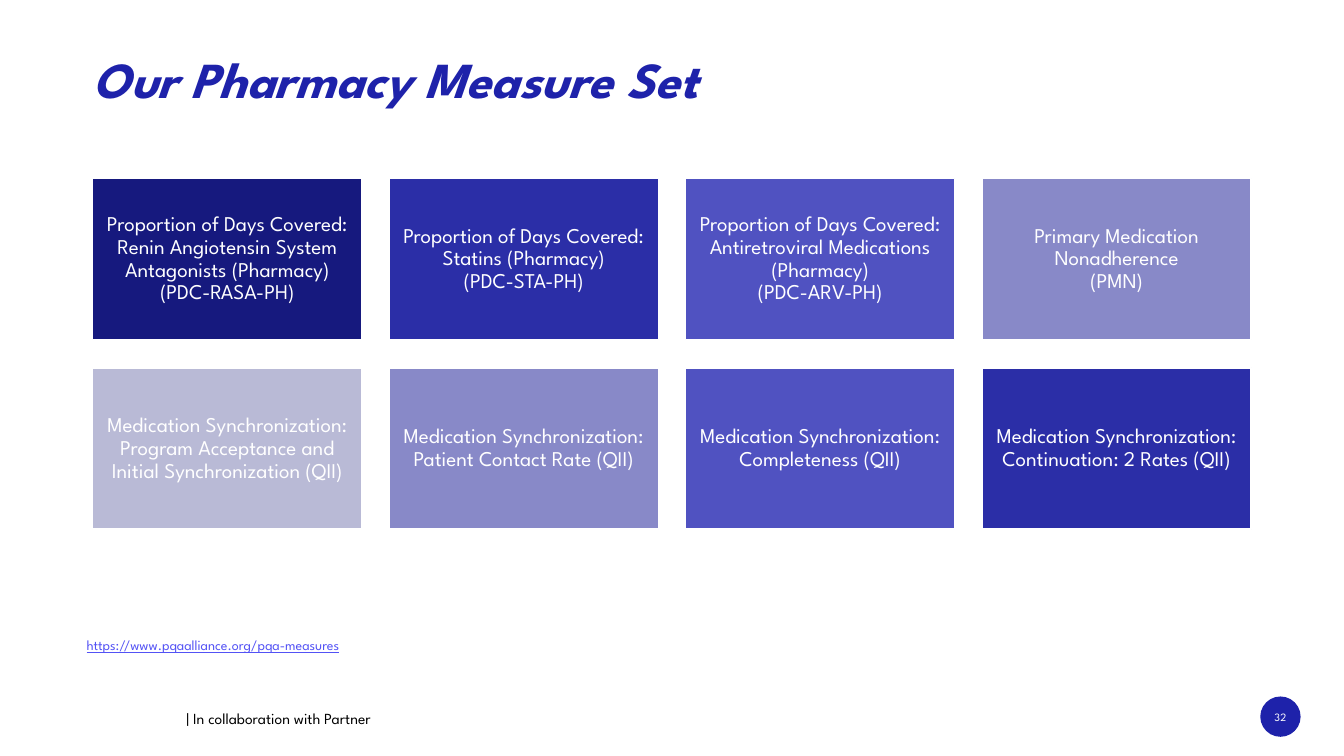
"""Build the pharmacy measure set slide."""
from pptx import Presentation
from pptx.dml.color import RGBColor
from pptx.enum.shapes import MSO_SHAPE
from pptx.enum.text import MSO_ANCHOR, PP_ALIGN
from pptx.util import Inches, Pt

FONT = "League Spartan"
COLORS = {
    "brand": "1E22AA",
    "navy": "16197E",
    "indigo": "2B2EA7",
    "violet": "5052C1",
    "lavender": "8889C8",
    "mist": "B9BAD6",
    "link": "5352F5",
    "black": "000000",
    "white": "FFFFFF",
}
MEASURES = [
    ("Proportion of Days Covered: Renin Angiotensin System Antagonists (Pharmacy) (PDC-RASA-PH)", "navy"),
    ("Proportion of Days Covered: Statins (Pharmacy)\n(PDC-STA-PH)", "indigo"),
    ("Proportion of Days Covered: Antiretroviral Medications (Pharmacy)\n(PDC-ARV-PH)", "violet"),
    ("Primary Medication Nonadherence\n(PMN)", "lavender"),
    ("Medication Synchronization: Program Acceptance and Initial Synchronization (QII)", "mist"),
    ("Medication Synchronization: Patient Contact Rate (QII)", "lavender"),
    ("Medication Synchronization: Completeness (QII)", "violet"),
    ("Medication Synchronization: Continuation: 2 Rates (QII)", "indigo"),
]
COLUMNS = 4
GRID_LEFT, GRID_TOP = 0.92, 1.77
CARD_WIDTH, CARD_HEIGHT = 2.67, 1.6
COLUMN_STEP, ROW_STEP = 2.94, 1.88


def color(name):
    return RGBColor.from_string(COLORS[name])


def set_margins(frame, margin):
    frame.margin_left = frame.margin_right = Inches(margin)
    frame.margin_top = frame.margin_bottom = Inches(margin)


def write(shape, text, size, color_name, centered=False, spacing=1.0,
          bold=False, italic=False, underline=False):
    frame = shape.text_frame
    frame.word_wrap = True
    frame.vertical_anchor = MSO_ANCHOR.MIDDLE if centered else MSO_ANCHOR.TOP
    paragraph = frame.paragraphs[0]
    paragraph.alignment = PP_ALIGN.CENTER if centered else PP_ALIGN.LEFT
    paragraph.line_spacing = spacing
    for index, line in enumerate(text.split("\n")):
        if index:
            paragraph.add_line_break()
        run = paragraph.add_run()
        run.text = line
        run.font.name = FONT
        run.font.size = Pt(size)
        run.font.color.rgb = color(color_name)
        run.font.bold = bold
        run.font.italic = italic
        run.font.underline = underline


def add_label(slide, left, top, width, height, text, size, color_name, margin=None, **style):
    box = slide.shapes.add_textbox(Inches(left), Inches(top), Inches(width), Inches(height))
    if margin is not None:
        set_margins(box.text_frame, margin)
    write(box, text, size, color_name, **style)


def add_filled_shape(slide, kind, left, top, width, height, fill):
    shape = slide.shapes.add_shape(kind, Inches(left), Inches(top), Inches(width), Inches(height))
    shape.shadow.inherit = False
    shape.fill.solid()
    shape.fill.fore_color.rgb = color(fill)
    return shape


def add_measure_card(slide, index, text, fill):
    row, column = divmod(index, COLUMNS)
    card = add_filled_shape(slide, MSO_SHAPE.RECTANGLE, GRID_LEFT + column * COLUMN_STEP,
                            GRID_TOP + row * ROW_STEP, CARD_WIDTH, CARD_HEIGHT, fill)
    card.line.color.rgb = color("white")
    card.line.width = Pt(1)
    set_margins(card.text_frame, 0.06)
    write(card, text, 15, "white", centered=True, spacing=0.9)


def add_page_number(slide, number):
    badge = add_filled_shape(slide, MSO_SHAPE.OVAL, 12.5, 6.91, 0.4, 0.4, "brand")
    badge.line.fill.background()
    add_label(slide, 12.42, 6.99, 0.56, 0.25, number, 8, "white", margin=0, centered=True)


def main():
    presentation = Presentation()
    presentation.slide_width = Inches(13.33)
    presentation.slide_height = Inches(7.5)
    slide = presentation.slides.add_slide(presentation.slide_layouts[6])

    add_page_number(slide, "32")
    add_label(slide, 1.75, 6.99, 4.4, 0.29, "| In collaboration with Partner", 11, "black")
    add_label(slide, 0.92, 0.62, 10.75, 0.56, "Our Pharmacy Measure Set", 36, "brand",
              margin=0, spacing=0.75, bold=True, italic=True)
    for index, (text, fill) in enumerate(MEASURES):
        add_measure_card(slide, index, text, fill)
    add_label(slide, 0.76, 6.27, 6.11, 0.44, "https://www.pqaalliance.org/pqa-measures",
              10, "link", underline=True)

    presentation.save("out.pptx")


if __name__ == "__main__":
    main()
